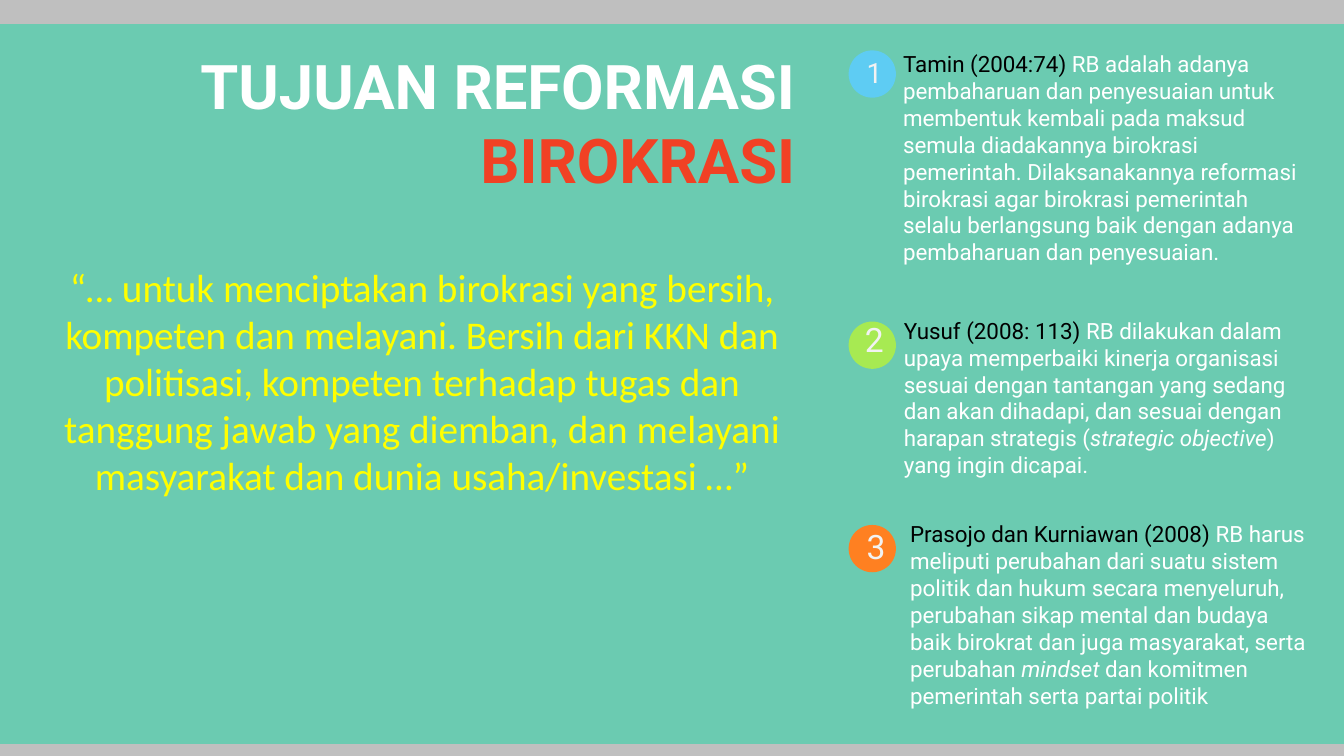
from lxml.etree import SubElement as Sub
from pptx import Presentation as Deck
from pptx.dml.color import RGBColor as RGB
from pptx.enum.shapes import MSO_SHAPE as Kind
from pptx.enum.text import MSO_ANCHOR as Anchor, PP_ALIGN as Align
from pptx.oxml.ns import qn
from pptx.util import Pt

WHITE = RGB(0xFF, 0xFF, 0xFF)
BLACK = RGB(0, 0, 0)
GRAY = RGB(0xBF, 0xBF, 0xBF)
PALE = RGB(0xF2, 0xF2, 0xF2)
TEAL = RGB(0x5D, 0xCE, 0xAF)
RED = RGB(0xF1, 0x41, 0x24)
YELLOW = RGB(0xFF, 0xFF, 0)
BLUE = RGB(0x5E, 0xCC, 0xF3)
GREEN = RGB(0xA7, 0xEA, 0x52)
ORANGE = RGB(0xFF, 0x80, 0x21)

deck = Deck()
deck.slide_width, deck.slide_height = Pt(960), Pt(540)
slide = deck.slides.add_slide(deck.slide_layouts[6])


def draw(kind, area, color):
    shape = slide.shapes.add_shape(kind, *map(Pt, area))
    shape.shadow.inherit = False
    shape.fill.solid()
    shape.fill.fore_color.rgb = color
    shape.line.fill.background()
    return shape


def write(para, runs, align, **form):
    para.alignment = align
    for text, color, *slant in runs:
        run = para.add_run()
        run.text = text
        run.font.color.rgb = color
        for key, value in form.items():
            setattr(run.font, key, value)
        if slant:
            run.font.italic = True


draw(Kind.RECTANGLE, (0, 0, 960, 540), GRAY)
panel = draw(Kind.RECTANGLE, (0, 17.3, 960, 514), TEAL)
tint = next(panel.fill._xPr.iter(qn("a:srgbClr")))
Sub(tint, qn("a:alpha"), val="85000")

main = slide.shapes.add_textbox(*map(Pt, (27.4, 31, 548, 435.6))).text_frame
main.word_wrap = True
title = main.paragraphs[0]
write(title, [("TUJUAN REFORMASI ", WHITE), ("BIROKRASI", RED)],
      Align.RIGHT, name="Roboto", size=Pt(44), bold=True)
title.space_after = Pt(6)
quote = main.add_paragraph()
write(quote, [(
    "“… untuk menciptakan birokrasi yang bersih, kompeten dan melayani. "
    "Bersih dari KKN dan politisasi, kompeten terhadap tugas dan tanggung "
    "jawab yang diemban, dan melayani masyarakat dan dunia "
    "usaha/investasi …”", YELLOW)],
    Align.CENTER, name="Calibri", size=Pt(28), bold=False)
quote.space_before = Pt(42)

views = [
    ((638, 17.3, 296, 191), 36, BLUE, (612, 36), 20, [
        ("Tamin (2004:74) ", BLACK),
        ("RB adalah adanya pembaharuan dan penyesuaian untuk membentuk "
         "kembali pada maksud semula diadakannya birokrasi pemerintah. "
         "Dilaksanakannya reformasi birokrasi agar birokrasi pemerintah "
         "selalu berlangsung baik dengan adanya pembaharuan dan "
         "penyesuaian.", WHITE)]),
    ((638.6, 215, 293, 138), 229.7, GREEN, (610.6, 224.6), 24, [
        ("Yusuf (2008: 113) ", BLACK),
        ("RB dilakukan dalam upaya memperbaiki kinerja organisasi sesuai "
         "dengan tantangan yang sedang dan akan dihadapi, dan sesuai dengan "
         "harapan strategis (", WHITE),
        ("strategic objective", WHITE, True),
        (") yang ingin dicapai.", WHITE)]),
    ((643, 368, 301.7, 142), 375, ORANGE, (612, 372.2), 24, [
        ("Prasojo dan Kurniawan (2008) ", BLACK),
        ("RB harus meliputi perubahan dari suatu sistem politik dan hukum "
         "secara menyeluruh, perubahan sikap mental dan budaya baik birokrat "
         "dan juga masyarakat, serta perubahan ", WHITE),
        ("mindset ", WHITE, True),
        ("dan komitmen pemerintah serta partai politik", WHITE)]),
]

for num, (area, top, color, spot, size, runs) in enumerate(views, 1):
    body = slide.shapes.add_textbox(*map(Pt, area)).text_frame
    body.word_wrap = True
    body.vertical_anchor = Anchor.MIDDLE
    write(body.paragraphs[0], runs, Align.LEFT, name="Roboto", size=Pt(16))
    draw(Kind.OVAL, (606.2, top, 33.8, 33.8), color)
    label = slide.shapes.add_textbox(*map(Pt, (*spot, 22.3, 36))).text_frame
    label.word_wrap = True
    write(label.paragraphs[0], [(str(num), PALE)], Align.CENTER,
          name="Roboto", size=Pt(size))

deck.save("out.pptx")
